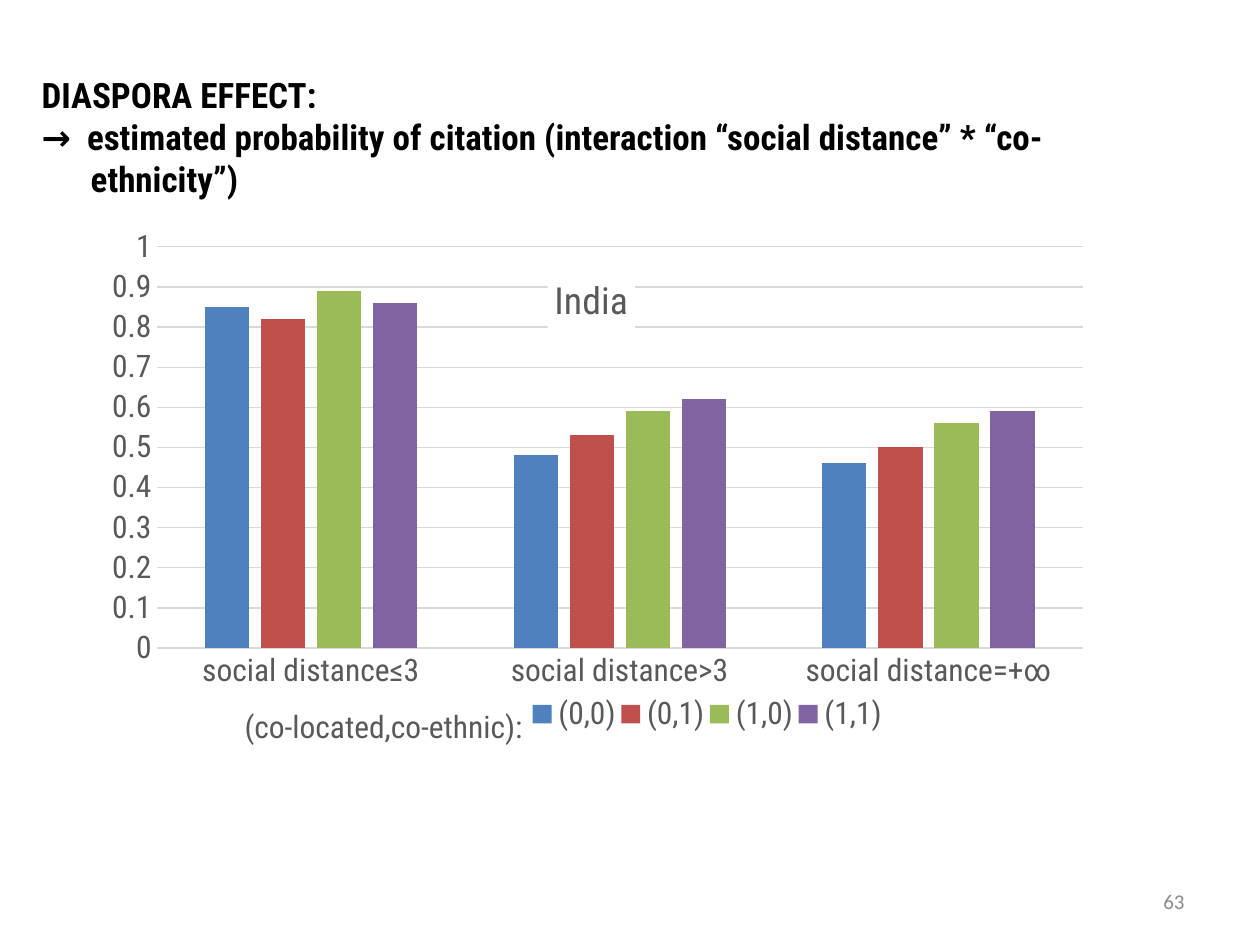
"""Build the diaspora effect slide with its clustered column chart."""
from dataclasses import dataclass

import pptx
import pptx.chart.data
import pptx.dml.color
import pptx.enum.chart
import pptx.enum.text
import pptx.oxml
import pptx.oxml.ns
import pptx.util

W, H = 10, 7.5


@dataclass(frozen=True)
class Theme:
    """Hold the fonts, type sizes and colours."""
    font: str = "Roboto Condensed"
    number_font: str = "Calibri"
    heading: float = 20
    chart_title: float = 21.6
    label: float = 18
    number: float = 12
    black: str = "000000"
    white: str = "FFFFFF"
    text: str = "595959"
    grid: str = "D9D9D9"
    muted: str = "8C8C8C"
    series: tuple = ("4F81BD", "C0504D", "9BBB59", "8064A2")


T = Theme()
CATEGORIES = ["social distance≤3", "social distance>3", "social distance=+∞"]
SERIES = {
    "(0,0)": (0.85, 0.48, 0.46),
    "(0,1)": (0.82, 0.53, 0.5),
    "(1,0)": (0.89, 0.59, 0.56),
    "(1,1)": (0.86, 0.62, 0.59),
}


def rgb(value):
    """Return a colour object for a hex value."""
    return pptx.dml.color.RGBColor.from_string(value)


def box(x, y, w, h):
    """Turn shares of the slide's size into lengths."""
    return [pptx.util.Inches(round(v, 2)) for v in (x * W, y * H, w * W, h * H)]


def style(font, size=T.label, color=T.text, name=T.font, bold=False):
    """Format a font."""
    font.size, font.name, font.bold = pptx.util.Pt(size), name, bold
    font.color.rgb = rgb(color)


def write(tf, text, first=True, hang=0, align=None, **fmt):
    """Write one paragraph with a hanging indent in inches."""
    p = tf.paragraphs[0] if first else tf.add_paragraph()
    if hang:
        indent = pptx.util.Inches(hang)
        pPr = p._p.get_or_add_pPr()
        pPr.set("marL", str(indent))
        pPr.set("indent", str(-indent))
    p.alignment = align
    r = p.add_run()
    r.text = text
    style(r.font, **fmt)


def place(parent, after=None, inner=False, **shares):
    """Give a chart part a manual layout in shares of the chart."""
    qn = pptx.oxml.ns.qn
    for old in parent.findall(qn("c:layout")):
        parent.remove(old)
    settings = {"layoutTarget": "inner"} if inner else {}
    settings |= {"xMode": "edge", "yMode": "edge"} | shares
    body = "".join(f'<c:{k} val="{v}"/>' for k, v in settings.items())
    layout = pptx.oxml.parse_xml(
        f'<c:layout {pptx.oxml.ns.nsdecls("c")}>'
        f"<c:manualLayout>{body}</c:manualLayout></c:layout>")
    if after:
        parent.find(qn(after)).addnext(layout)
    else:
        parent.insert(0, layout)


def add_title(s):
    """Fill the title placeholder."""
    sp = s.shapes.title
    sp.left, sp.top, sp.width, sp.height = box(0.023, 0.07, 0.918, 0.148)
    tf = sp.text_frame
    tf.word_wrap = True
    tf.auto_size = pptx.enum.text.MSO_AUTO_SIZE.NONE
    tf.vertical_anchor = pptx.enum.text.MSO_ANCHOR.TOP
    fmt = dict(align=pptx.enum.text.PP_ALIGN.LEFT, size=T.heading,
               color=T.black, bold=True)
    write(tf, "DIASPORA EFFECT:", hang=3.04, **fmt)
    write(tf, "→  estimated probability of citation (interaction "
          "“social distance” * “co-ethnicity”)", first=False, hang=0.39, **fmt)


def add_number(s, text):
    """Add the slide number at the bottom right."""
    tf = s.shapes.add_textbox(*box(0.717, 0.927, 0.233, 0.053)).text_frame
    tf.word_wrap = True
    tf.vertical_anchor = pptx.enum.text.MSO_ANCHOR.MIDDLE
    write(tf, text, align=pptx.enum.text.PP_ALIGN.RIGHT, size=T.number,
          color=T.muted, name=T.number_font)


def format_axes(chart):
    """Format both axes and the gridlines."""
    cat, val = chart.category_axis, chart.value_axis
    for axis in (cat, val):
        axis.major_tick_mark = pptx.enum.chart.XL_TICK_MARK.NONE
        axis.minor_tick_mark = pptx.enum.chart.XL_TICK_MARK.NONE
        style(axis.tick_labels.font)
    val.minimum_scale, val.maximum_scale, val.major_unit = 0, 1, 0.1
    val.has_major_gridlines = True
    val.format.line.fill.background()
    for line in (cat.format.line, val.major_gridlines.format.line):
        line.color.rgb = rgb(T.grid)
        line.width = pptx.util.Pt(0.75)
    write(cat.axis_title.text_frame, "(co-located,co-ethnic):")
    place(cat.axis_title._element, "c:tx", x=0.15, y=0.91)


def format_titles(chart):
    """Overlay the chart title and set the legend beside the axis title."""
    chart.has_title = True
    title = chart.chart_title
    write(title.text_frame, "India", size=T.chart_title)
    title.format.fill.solid()
    title.format.fill.fore_color.rgb = rgb(T.white)
    title._element.find(pptx.oxml.ns.qn("c:overlay")).set("val", "1")
    place(title._element, "c:tx", x=0.45, y=0.09)
    chart.has_legend = True
    legend = chart.legend
    legend.position = pptx.enum.chart.XL_LEGEND_POSITION.BOTTOM
    legend.include_in_layout = False
    style(legend.font)
    place(legend._element, "c:legendPos", x=0.43, y=0.89, w=0.35, h=0.09)


def add_columns(s):
    """Add the clustered column chart."""
    data = pptx.chart.data.CategoryChartData()
    data.categories = CATEGORIES
    for name, values in SERIES.items():
        data.add_series(name, values)
    kind = pptx.enum.chart.XL_CHART_TYPE.COLUMN_CLUSTERED
    chart = s.shapes.add_chart(
        kind, *box(0.067, 0.2333, 0.817, 0.5667), data).chart
    style(chart.font, color=T.black)
    plot = chart.plots[0]
    plot.gap_width, plot.overlap, plot.vary_by_categories = 219, -27, False
    for series, color in zip(plot.series, T.series):
        series.format.fill.solid()
        series.format.fill.fore_color.rgb = rgb(color)
    format_axes(chart)
    format_titles(chart)
    place(chart._chartSpace.chart.plotArea, inner=True,
          x=0.07, y=0.05, w=0.9, h=0.76)


def main():
    """Build and save the slide."""
    prs = pptx.Presentation()
    prs.slide_width, prs.slide_height = pptx.util.Inches(W), pptx.util.Inches(H)
    s = prs.slides.add_slide(prs.slide_layouts[5])
    add_title(s)
    add_columns(s)
    add_number(s, "63")
    prs.save("out.pptx")


if __name__ == "__main__":
    main()
